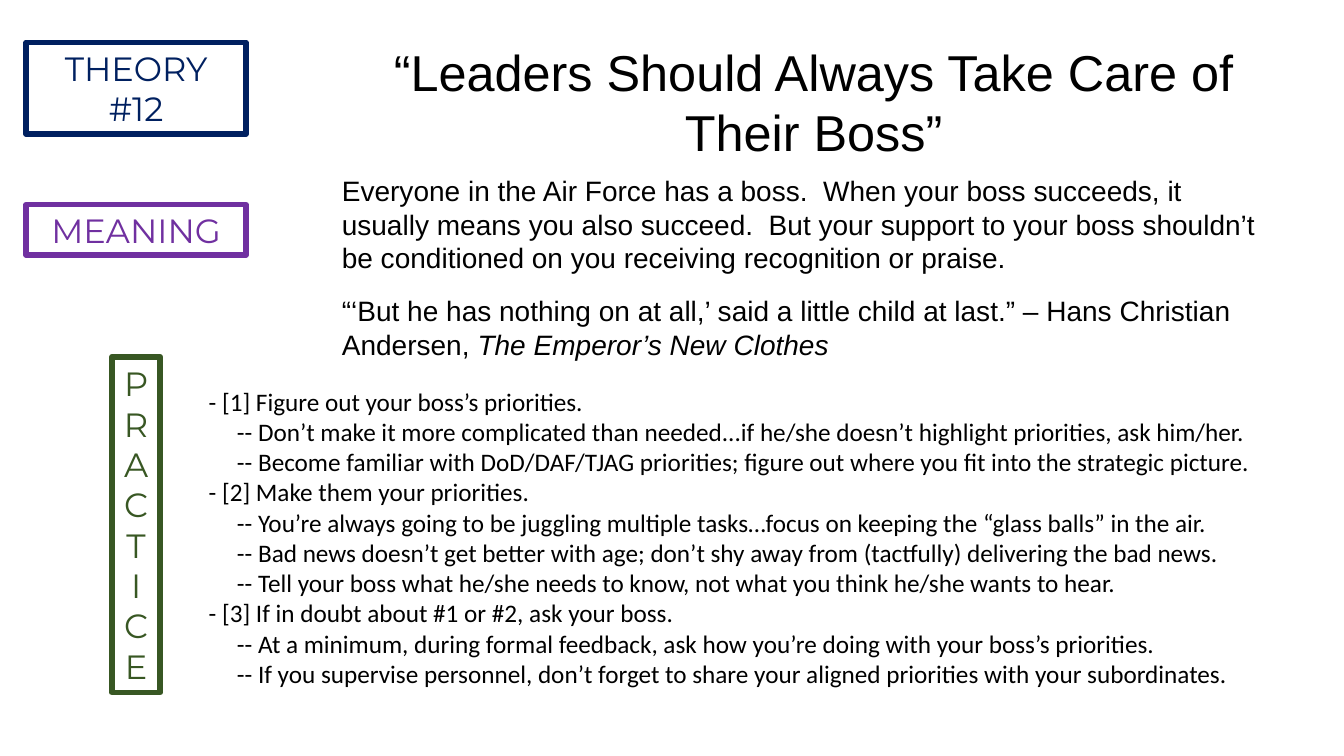
from dataclasses import dataclass

from lxml import etree
from pptx import Presentation
from pptx.dml.color import RGBColor
from pptx.enum.shapes import MSO_SHAPE
from pptx.enum.text import MSO_ANCHOR, MSO_AUTO_SIZE, PP_ALIGN
from pptx.oxml.ns import qn
from pptx.util import Inches, Pt

RECTANGLE = MSO_SHAPE.RECTANGLE
CENTER, LEFT = PP_ALIGN.CENTER, PP_ALIGN.LEFT
TOP, MIDDLE = MSO_ANCHOR.TOP, MSO_ANCHOR.MIDDLE
NO_AUTOFIT = MSO_AUTO_SIZE.NONE
TWO_CONTENT_LAYOUT = 3
SUBPOINT_INDENT = 0.28

COLORS = {"text": "000000", "theory": "002060", "meaning": "7030A0", "practice": "385723"}


@dataclass
class Box:
    left: float
    top: float
    width: float
    height: float


@dataclass
class Label:
    text: str
    color: str
    box: Box


@dataclass
class Practice:
    heading: str
    subpoints: list[str]


LABELS = [
    Label("THEORY #12", "theory", Box(0.26, 0.42, 2.18, 0.91)),
    Label("MEANING", "meaning", Box(0.26, 2.03, 2.18, 0.5)),
    Label("PRACTICE", "practice", Box(1.11, 3.54, 0.48, 3.33)),
]

TITLE = "“Leaders Should Always Take Care of Their Boss”"
MEANING = (
    "Everyone in the Air Force has a boss.  When your boss succeeds, it usually means "
    "you also succeed.  But your support to your boss shouldn’t be conditioned on you "
    "receiving recognition or praise."
)
QUOTE = "“‘But he has nothing on at all,’ said a little child at last.” – Hans Christian Andersen, "
QUOTED_BOOK = "The Emperor’s New Clothes"

PRACTICES = [
    Practice("Figure out your boss’s priorities.", [
        "Don’t make it more complicated than needed...if he/she doesn’t highlight priorities, ask him/her.",
        "Become familiar with DoD/DAF/TJAG priorities; figure out where you fit into the strategic picture.",
    ]),
    Practice("Make them your priorities.", [
        "You’re always going to be juggling multiple tasks…focus on keeping the “glass balls” in the air.",
        "Bad news doesn’t get better with age; don’t shy away from (tactfully) delivering the bad news.",
        "Tell your boss what he/she needs to know, not what you think he/she wants to hear.",
    ]),
    Practice("If in doubt about #1 or #2, ask your boss.", [
        "At a minimum, during formal feedback, ask how you’re doing with your boss’s priorities.",
        "If you supervise personnel, don’t forget to share your aligned priorities with your subordinates.",
    ]),
]


def style(paragraph, font_name: str, size: int, color: str, align=LEFT) -> None:
    paragraph.alignment = align
    paragraph.font.name = font_name
    paragraph.font.size = Pt(size)
    paragraph.font.color.rgb = RGBColor.from_string(COLORS[color])


def style_plain(paragraph, font_name: str, size: int, indent: float = 0, before: int = 0) -> None:
    """Style a body paragraph without a bullet or hanging indent."""
    style(paragraph, font_name, size, "text")
    paragraph.space_before = Pt(before)
    properties = paragraph._p.get_or_add_pPr()
    properties.set("marL", str(Inches(indent)))
    properties.set("indent", "0")
    no_bullet = etree.Element(qn("a:buNone"))
    properties.find(qn("a:defRPr")).addprevious(no_bullet)


def place(placeholder, box: Box, anchor):
    placeholder.left, placeholder.top = Inches(box.left), Inches(box.top)
    placeholder.width, placeholder.height = Inches(box.width), Inches(box.height)
    frame = placeholder.text_frame
    frame.word_wrap = True
    frame.auto_size = NO_AUTOFIT
    frame.vertical_anchor = anchor
    return frame


def add_label(slide, label: Label) -> None:
    box = label.box
    frame_box = slide.shapes.add_shape(
        RECTANGLE, Inches(box.left), Inches(box.top), Inches(box.width), Inches(box.height))
    frame_box.shadow.inherit = False
    frame_box.fill.background()
    frame_box.line.color.rgb = RGBColor.from_string(COLORS[label.color])
    frame_box.line.width = Pt(4)
    frame_box.text_frame.word_wrap = True
    frame_box.text_frame.text = label.text
    style(frame_box.text_frame.paragraphs[0], "Montserrat", 24, label.color, CENTER)


def main() -> None:
    deck = Presentation()
    deck.slide_width, deck.slide_height = Inches(13.33), Inches(7.5)
    slide = deck.slides.add_slide(deck.slide_layouts[TWO_CONTENT_LAYOUT])
    title, meaning, practice = slide.placeholders

    # Title
    title_frame = place(title, Box(3.47, 0.35, 9.2, 1.31), MIDDLE)
    title_frame.text = TITLE
    style(title_frame.paragraphs[0], "Arial", 36, "text", CENTER)

    # Meaning and quotation
    meaning_frame = place(meaning, Box(3.29, 1.67, 9.29, 1.99), TOP)
    meaning_frame.text = MEANING
    style_plain(meaning_frame.paragraphs[0], "Arial", 20)
    quotation = meaning_frame.add_paragraph()
    quotation.add_run().text = QUOTE
    book = quotation.add_run()
    book.text = QUOTED_BOOK
    book.font.italic = True
    style_plain(quotation, "Arial", 20, before=14)

    # Practice list
    practice_frame = place(practice, Box(1.97, 3.78, 10.7, 3.13), TOP)
    lines = []
    for number, point in enumerate(PRACTICES, start=1):
        lines.append((f"- [{number}] {point.heading}", 0))
        lines += [(f"-- {subpoint}", SUBPOINT_INDENT) for subpoint in point.subpoints]
    practice_frame.text = "\n".join(text for text, _ in lines)
    for paragraph, (_, indent) in zip(practice_frame.paragraphs, lines):
        style_plain(paragraph, "Calibri", 18, indent)

    # Section labels
    for label in LABELS:
        add_label(slide, label)

    deck.save("out.pptx")


if __name__ == "__main__":
    main()
